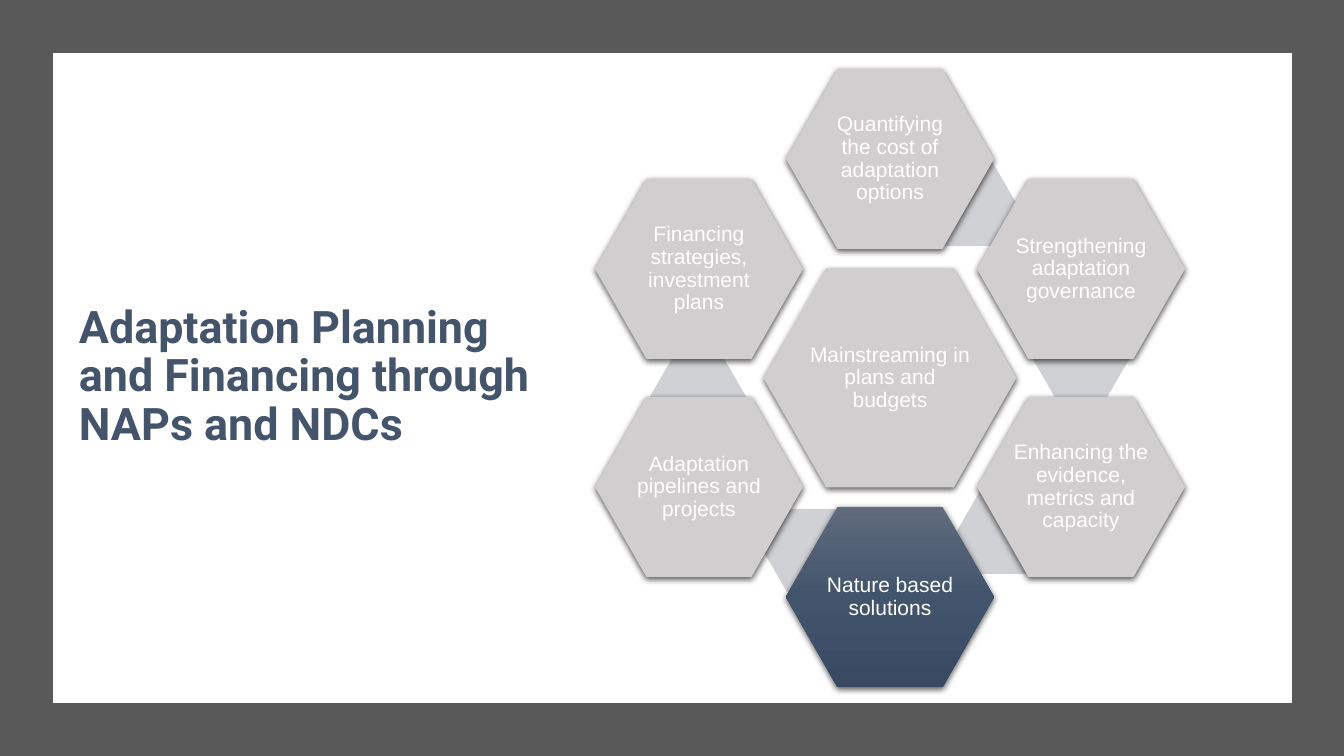
from dataclasses import dataclass

from lxml.etree import SubElement
from pptx import Presentation
from pptx.dml.color import RGBColor
from pptx.enum.shapes import MSO_SHAPE as Shape
from pptx.enum.text import MSO_ANCHOR as Anchor, PP_ALIGN as Align
from pptx.oxml import parse_xml
from pptx.oxml.ns import nsdecls, qn
from pptx.util import Pt

SLIDE = (1344, 756)
PANEL = (53, 53, 1239, 650)
TITLE_BOX = (69, 128, 481, 499)
TITLE = "Adaptation Planning and Financing through NAPs and NDCs"

RING_CENTER = (890, 378)
COLUMN_STEP, NEAR_ROW, FAR_ROW = 191, 109, 219
CORE_SIZE, TOPIC_SIZE, LINK_SIZE = (253, 219), (208, 180), (96, 83)
CORE = "Mainstreaming in plans and budgets"
HIGHLIGHT = "Nature based solutions"
TOPICS = [
    ("Quantifying the cost of adaptation options", 0, -FAR_ROW),
    ("Strengthening adaptation governance", COLUMN_STEP, -NEAR_ROW),
    ("Enhancing the evidence, metrics and capacity", COLUMN_STEP, NEAR_ROW),
    (HIGHLIGHT, 0, FAR_ROW),
    ("Adaptation pipelines and projects", -COLUMN_STEP, NEAR_ROW),
    ("Financing strategies, investment plans", -COLUMN_STEP, -NEAR_ROW),
]
LINK_CORNERS = [(921, 163), (1033, 318), (956, 491), (763, 509), (650, 355)]


@dataclass(frozen=True)
class Theme:
    frame: str = "595959"
    paper: str = "FFFFFF"
    title: str = "44546A"
    topic: str = "D0CECE"
    link: str = "CFD1D4"
    shadow: str = "000000"
    highlight: tuple = ((0, "606B7D"), (50, "42546C"), (100, "394A62"))
    title_font: str = "Roboto"
    topic_font: str = "Arial"
    title_size: int = 32
    topic_size: int = 15


THEME = Theme()


def px(length):
    return round(length * 914400 / 100.8)


def centered(dx, dy, size):
    return (RING_CENTER[0] + dx - size[0] / 2, RING_CENTER[1] + dy - size[1] / 2, *size)


def write(holder, text, *, font, size, color, bold=False, align=Align.LEFT, inset=None, after=0):
    frame = holder.text_frame
    frame.word_wrap = True
    frame.vertical_anchor = Anchor.MIDDLE
    if inset is not None:
        frame.margin_left = frame.margin_right = px(inset)
        frame.margin_top = frame.margin_bottom = px(inset)
    paragraph = frame.paragraphs[0]
    paragraph.alignment = align
    paragraph.line_spacing = 0.9
    paragraph.space_after = Pt(after)
    run = paragraph.add_run()
    run.text = text
    run.font.name = font
    run.font.size = Pt(size)
    run.font.bold = bold
    run.font.color.rgb = RGBColor.from_string(color)


def add_plain(slide, kind, box, color):
    shape = slide.shapes.add_shape(kind, *map(px, box))
    shape.shadow.inherit = False
    shape.fill.solid()
    shape.fill.fore_color.rgb = RGBColor.from_string(color)
    shape.line.fill.background()
    return shape


def add_shadow(shape):
    effects = shape._element.spPr.find(qn("a:effectLst"))
    outer = SubElement(effects, qn("a:outerShdw"), blurRad=str(Pt(4.5)), dist=str(Pt(1.5)),
                       dir="5400000", algn="ctr", rotWithShape="0")
    color = SubElement(outer, qn("a:srgbClr"), val=THEME.shadow)
    SubElement(color, qn("a:alpha"), val="63000")


def shade_down(shape, stops):
    marks = "".join(f'<a:gs pos="{place * 1000}"><a:srgbClr val="{color}"/></a:gs>'
                    for place, color in stops)
    gradient = parse_xml(f'<a:gradFill {nsdecls("a")} rotWithShape="1"><a:gsLst>{marks}</a:gsLst>'
                         '<a:lin ang="5400000" scaled="0"/></a:gradFill>')
    properties = shape._element.spPr
    properties.replace(properties.find(qn("a:solidFill")), gradient)


def add_topic(slide, text, box):
    topic = add_plain(slide, Shape.HEXAGON, box, THEME.topic)
    topic.adjustments[0] = 0.286
    add_shadow(topic)
    if text == HIGHLIGHT:
        shade_down(topic, THEME.highlight)
    write(topic, text, font=THEME.topic_font, size=THEME.topic_size, color=THEME.paper,
          align=Align.CENTER, inset=2)


def main():
    deck = Presentation()
    deck.slide_width, deck.slide_height = map(px, SLIDE)
    slide = deck.slides.add_slide(deck.slide_layouts[6])

    add_plain(slide, Shape.RECTANGLE, (0, 0, *SLIDE), THEME.frame)
    add_plain(slide, Shape.RECTANGLE, PANEL, THEME.paper)
    title = slide.shapes.add_textbox(*map(px, TITLE_BOX))
    write(title, TITLE, font=THEME.title_font, size=THEME.title_size, color=THEME.title,
          bold=True, after=6)

    for corner in LINK_CORNERS:
        link = add_plain(slide, Shape.HEXAGON, (*corner, *LINK_SIZE), THEME.link)
        link.adjustments[0] = 0.289
    add_topic(slide, CORE, centered(0, 0, CORE_SIZE))
    for text, dx, dy in TOPICS:
        add_topic(slide, text, centered(dx, dy, TOPIC_SIZE))

    deck.save("out.pptx")


if __name__ == "__main__":
    main()
